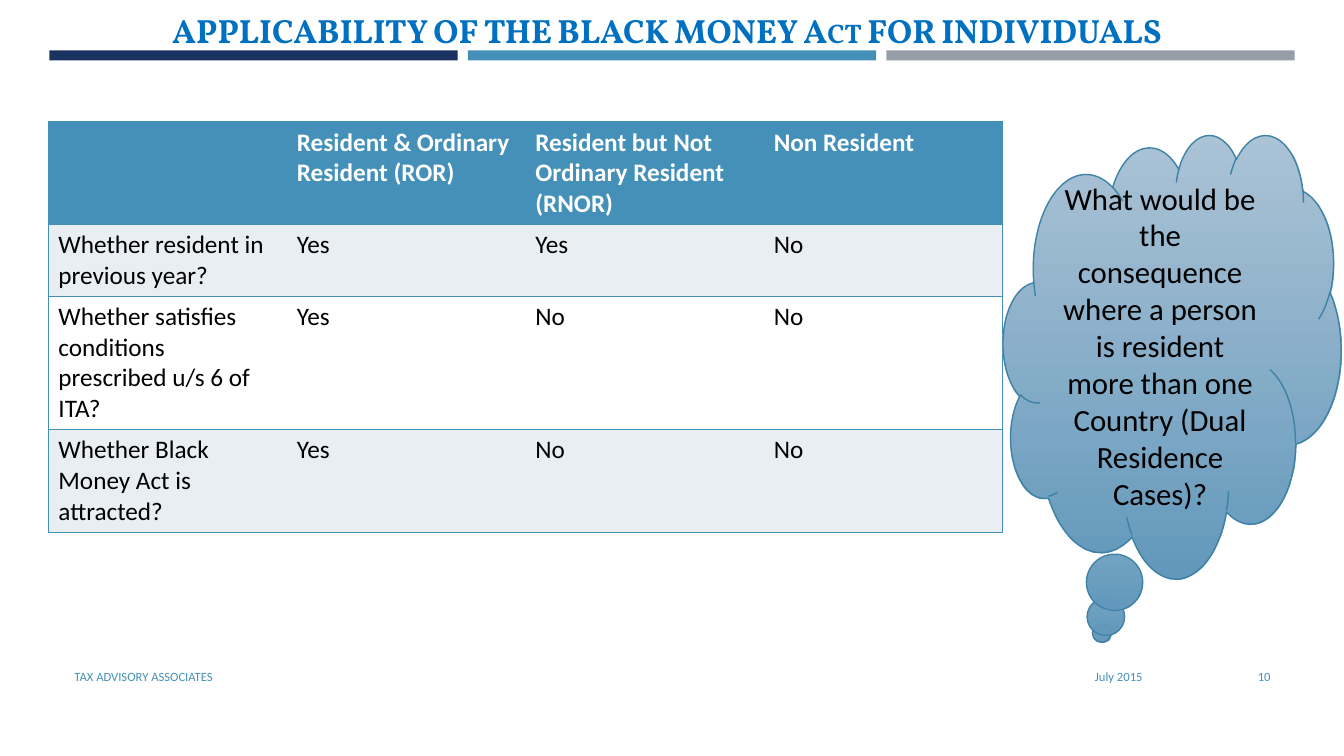
from lxml.etree import SubElement
from pptx import Presentation
from pptx.dml.color import RGBColor
from pptx.enum.shapes import MSO_SHAPE
from pptx.enum.text import MSO_ANCHOR, PP_ALIGN
from pptx.oxml.ns import qn
from pptx.util import Inches, Pt

NAVY = RGBColor(0x1A, 0x32, 0x60)
BLUE = RGBColor(0x45, 0x90, 0xB8)
GREY = RGBColor(0x96, 0x9F, 0xA7)
TITLE_BLUE = RGBColor(0x00, 0x70, 0xC0)
BAND = RGBColor(0xE9, 0xEE, 0xF3)
WHITE = RGBColor(0xFF, 0xFF, 0xFF)
BLACK = RGBColor(0x00, 0x00, 0x00)
CLOUD_TOP = RGBColor(0xA2, 0xBD, 0xD2)
CLOUD_BOTTOM = RGBColor(0x63, 0x99, 0xBC)
CLOUD_LINE = RGBColor(0x3E, 0x82, 0xA6)

ROWS = [
    ["", "Resident & Ordinary Resident (ROR)",
     "Resident but Not Ordinary Resident (RNOR)", "Non Resident"],
    ["Whether resident in previous year?", "Yes", "Yes", "No"],
    ["Whether satisfies conditions prescribed u/s 6 of ITA?", "Yes", "No", "No"],
    ["Whether Black Money Act is attracted?", "Yes", "No", "No"],
]
ROW_HEIGHTS = [1.02, 0.71, 1.32, 1.02]


def write(tf, text, size, color, align=PP_ALIGN.LEFT, font="Calibri", bold=False):
    tf.word_wrap = True
    p = tf.paragraphs[0]
    p.text = text
    p.alignment = align
    p.font.name = font
    p.font.size = Pt(size)
    p.font.bold = bold
    p.font.color.rgb = color
    return p


def add_bars(slide, left, top, width, height, gap=0.1):
    colors = [NAVY, BLUE, GREY]
    bar_width = (width - gap * (len(colors) - 1)) / len(colors)
    for i, color in enumerate(colors):
        sp = slide.shapes.add_shape(
            MSO_SHAPE.RECTANGLE, Inches(left + i * (bar_width + gap)),
            Inches(top), Inches(bar_width), Inches(height))
        sp.shadow.inherit = False
        sp.fill.solid()
        sp.fill.fore_color.rgb = color
        sp.line.fill.background()


def add_title(slide, left, top, width, height):
    sp = slide.shapes.add_textbox(
        Inches(left), Inches(top), Inches(width), Inches(height))
    sp.text_frame.margin_right = Inches(0.2)
    p = write(sp.text_frame, "APPLICABILITY OF THE BLACK MONEY Act FOR INDIVIDUALS",
              24, TITLE_BLUE, PP_ALIGN.CENTER, "Vollkorn", True)
    p.runs[0].font.bold = True
    p.runs[0].font._element.set("cap", "small")


def set_borders(cell, visible_sides):
    tcPr = cell._tc.get_or_add_tcPr()
    for side in "LRTB":
        ln = SubElement(tcPr, qn(f"a:ln{side}"), w=str(Pt(1)))
        if side in visible_sides:
            fill = SubElement(ln, qn("a:solidFill"))
            SubElement(fill, qn("a:srgbClr"), val=str(BLUE))
        else:
            SubElement(ln, qn("a:noFill"))


def add_residence_table(slide, left, top, width):
    count = len(ROWS[0])
    table = slide.shapes.add_table(
        len(ROWS), count, Inches(left), Inches(top),
        Inches(width), Inches(sum(ROW_HEIGHTS))).table
    for column in table.columns:
        column.width = Inches(width / count)
    for i, (texts, height) in enumerate(zip(ROWS, ROW_HEIGHTS)):
        table.rows[i].height = Inches(height)
        for j, text in enumerate(texts):
            cell = table.cell(i, j)
            sides = "TB" + ("L" if j == 0 else "") + ("R" if j == count - 1 else "")
            set_borders(cell, sides)
            cell.fill.solid()
            cell.fill.fore_color.rgb = BLUE if i == 0 else BAND if i % 2 else WHITE
            write(cell.text_frame, text, 18, BLACK if i else WHITE, bold=i == 0)


def add_cloud(slide, left, top, width, height):
    sp = slide.shapes.add_shape(
        MSO_SHAPE.CLOUD_CALLOUT, Inches(left), Inches(top),
        Inches(width), Inches(height))
    sp.shadow.inherit = False
    sp.fill.gradient()
    sp.fill.gradient_angle = 270
    for stop, color in zip(sp.fill.gradient_stops, [CLOUD_TOP, CLOUD_BOTTOM]):
        stop.color.rgb = color
    top_color = sp._element.spPr.find(".//" + qn("a:srgbClr"))
    SubElement(top_color, qn("a:alpha"), val="90000")
    sp.line.color.rgb = CLOUD_LINE
    sp.line.width = Pt(1)
    sp.text_frame.vertical_anchor = MSO_ANCHOR.MIDDLE
    write(sp.text_frame, "What would be the consequence where a person is resident "
          "more than one Country (Dual Residence Cases)?", 22, BLACK, PP_ALIGN.CENTER)


def add_footer(slide, top, height):
    parts = [
        (0.64, 7.56, "TAX ADVISORY ASSOCIATES", PP_ALIGN.LEFT),
        (8.32, 3.11, "July 2015", PP_ALIGN.RIGHT),
        (11.55, 1.15, "10", PP_ALIGN.RIGHT),
    ]
    for left, width, text, align in parts:
        sp = slide.shapes.add_textbox(
            Inches(left), Inches(top), Inches(width), Inches(height))
        sp.text_frame.vertical_anchor = MSO_ANCHOR.MIDDLE
        write(sp.text_frame, text, 9, BLUE, align)


def main():
    prs = Presentation()
    prs.slide_width = Inches(13.33)
    prs.slide_height = Inches(7.5)
    slide = prs.slides.add_slide(prs.slide_layouts[6])
    add_bars(slide, 0.49, 0.5, 12.35, 0.1)
    add_residence_table(slide, 0.48, 1.21, 9.46)
    add_title(slide, 0, 0.05, 13.33, 0.5)
    add_cloud(slide, 9.95, 1.33, 3.35, 4.4)
    add_footer(slide, 6.51, 0.4)
    prs.save("out.pptx")


if __name__ == "__main__":
    main()
